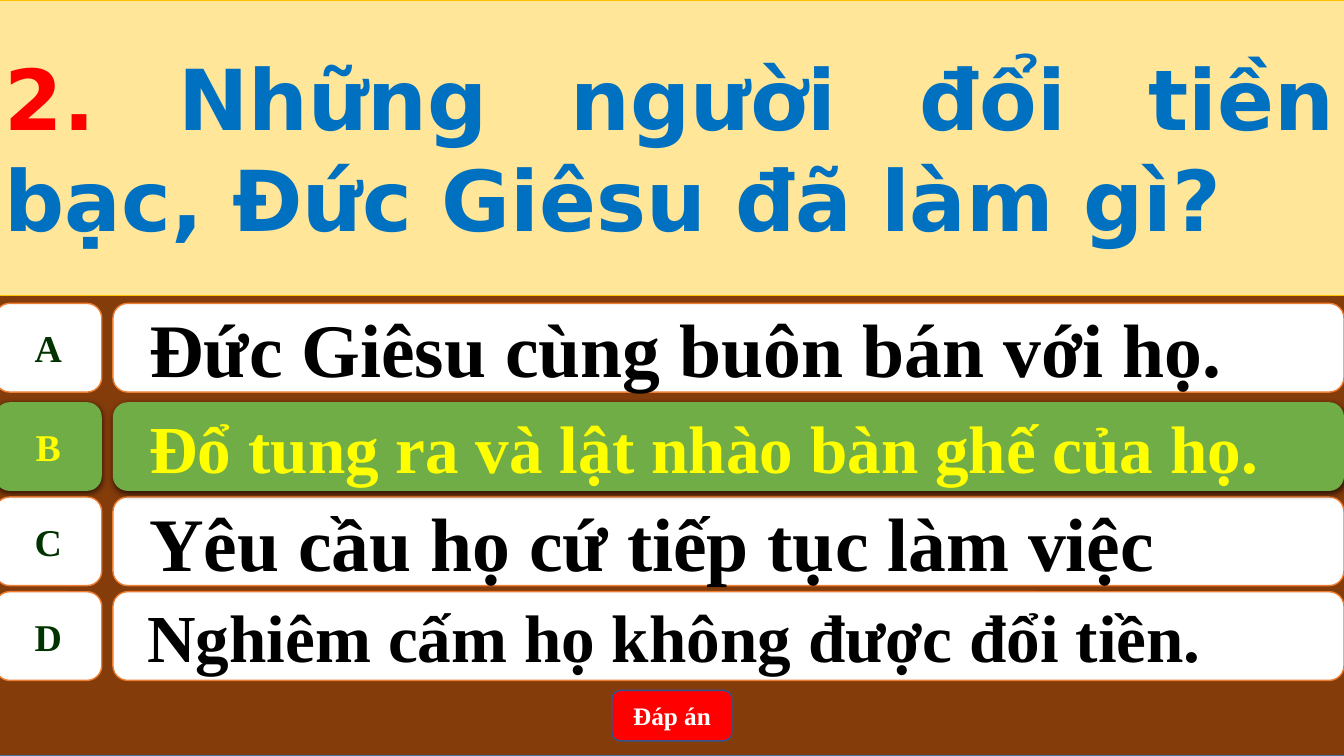
"""Build a quiz slide with one question, four answers and an answer button."""
from lxml.etree import SubElement
from pptx import Presentation
from pptx.dml.color import RGBColor
from pptx.enum.shapes import MSO_SHAPE
from pptx.enum.text import MSO_ANCHOR, PP_ALIGN
from pptx.oxml.ns import qn
from pptx.util import Emu, Pt

HUES = {
    "brown": "843C0B", "steel": "43739E", "cream": "FFE699", "gold": "FFC000",
    "white": "FFFFFF", "orange": "ED7D31", "green": "70AD47", "yellow": "FFFF00",
    "forest": "003300", "black": "000000", "red": "FF0000", "navy": "325491",
    "blue": "0070C0",
}
SERIF, SANS = "Times New Roman", "DejaVu Sans"
LEFT, WIDE, HIGH = -5, 1339, 750


class Board:
    """Hold the style and the current slide."""

    def __init__(self, deck, scale=9144):
        self.scale = scale
        deck.slide_width, deck.slide_height = self.size(1333), self.size(HIGH)
        self.slide = deck.slides.add_slide(deck.slide_layouts[6])

    def size(self, px):
        return Emu(px * self.scale)

    def hue(self, name):
        return RGBColor.from_string(HUES[name])

    def box(self, kind, place, fill, line=None, width=1):
        shape = self.slide.shapes.add_shape(kind, *map(self.size, place))
        shape.shadow.inherit = False
        shape.fill.solid()
        shape.fill.fore_color.rgb = self.hue(fill)
        if line:
            shape.line.color.rgb = self.hue(line)
            shape.line.width = Pt(width)
        else:
            shape.line.fill.background()
        return shape

    def text(self, shape, runs, points, font=SERIF, align=PP_ALIGN.CENTER, wrap=True):
        frame = shape.text_frame
        frame.word_wrap = wrap
        frame.vertical_anchor = MSO_ANCHOR.MIDDLE
        para = frame.paragraphs[0]
        para.alignment = align
        for words, color in runs:
            run = para.add_run()
            run.text = words
            run.font.name = font
            run.font.size = Pt(points)
            run.font.bold = True
            run.font.color.rgb = self.hue(color)
        return para

    def indent(self, para, left, first):
        props = para._p.get_or_add_pPr()
        props.set("marL", str(self.size(left)))
        props.set("indent", str(self.size(first)))

    def shade(self, shape):
        effects = shape._element.spPr.find(qn("a:effectLst"))
        outer = SubElement(effects, qn("a:outerShdw"), blurRad=str(Pt(4.5)),
                           dist=str(Pt(1.5)), dir="5400000", algn="ctr", rotWithShape="0")
        color = SubElement(outer, qn("a:srgbClr"), val=HUES["black"])
        SubElement(color, qn("a:alpha"), val="63000")

    def answer(self, letter, words, top, points, left=50, first=-28, right=False):
        fill, line = ("green", None) if right else ("white", "orange")
        tag = self.box(MSO_SHAPE.FLOWCHART_ALTERNATE_PROCESS, (LEFT, top, 106, 88), fill, line)
        self.text(tag, [(letter, "yellow" if right else "forest")], 27, wrap=False)
        bar = self.box(MSO_SHAPE.ROUNDED_RECTANGLE, (112, top, 1221, 88), fill, line)
        para = self.text(bar, [(words, "yellow" if right else "black")], points,
                         align=PP_ALIGN.LEFT)
        self.indent(para, left, first)
        if right:
            self.shade(tag)
            self.shade(bar)


def main():
    deck = Presentation()
    board = Board(deck)
    board.box(MSO_SHAPE.RECTANGLE, (LEFT, 0, WIDE, HIGH), "brown", "steel")

    title = board.box(MSO_SHAPE.RECTANGLE, (LEFT, 0, WIDE, 293), "cream", "gold", 0.5)
    board.text(title, [("2. ", "red"),
                       ("Những người đổi tiền bạc, Đức Giêsu đã làm gì?", "blue")],
               60, SANS, PP_ALIGN.JUSTIFY)

    board.answer("A", "Đức Giêsu cùng buôn bán với họ.", 301, 54)
    board.answer("C", "Yêu cầu họ cứ tiếp tục làm việc", 493, 54)
    board.answer("D", "Nghiêm cấm họ không được đổi tiền.", 587, 48, left=20, first=0)
    board.answer("B", "Đổ tung ra và lật nhào bàn ghế của họ.", 399, 48, right=True)

    button = board.box(MSO_SHAPE.ROUNDED_RECTANGLE, (607, 685, 119, 50), "red", "navy")
    board.text(button, [("Đáp án", "white")], 18)
    deck.save("out.pptx")


if __name__ == "__main__":
    main()
